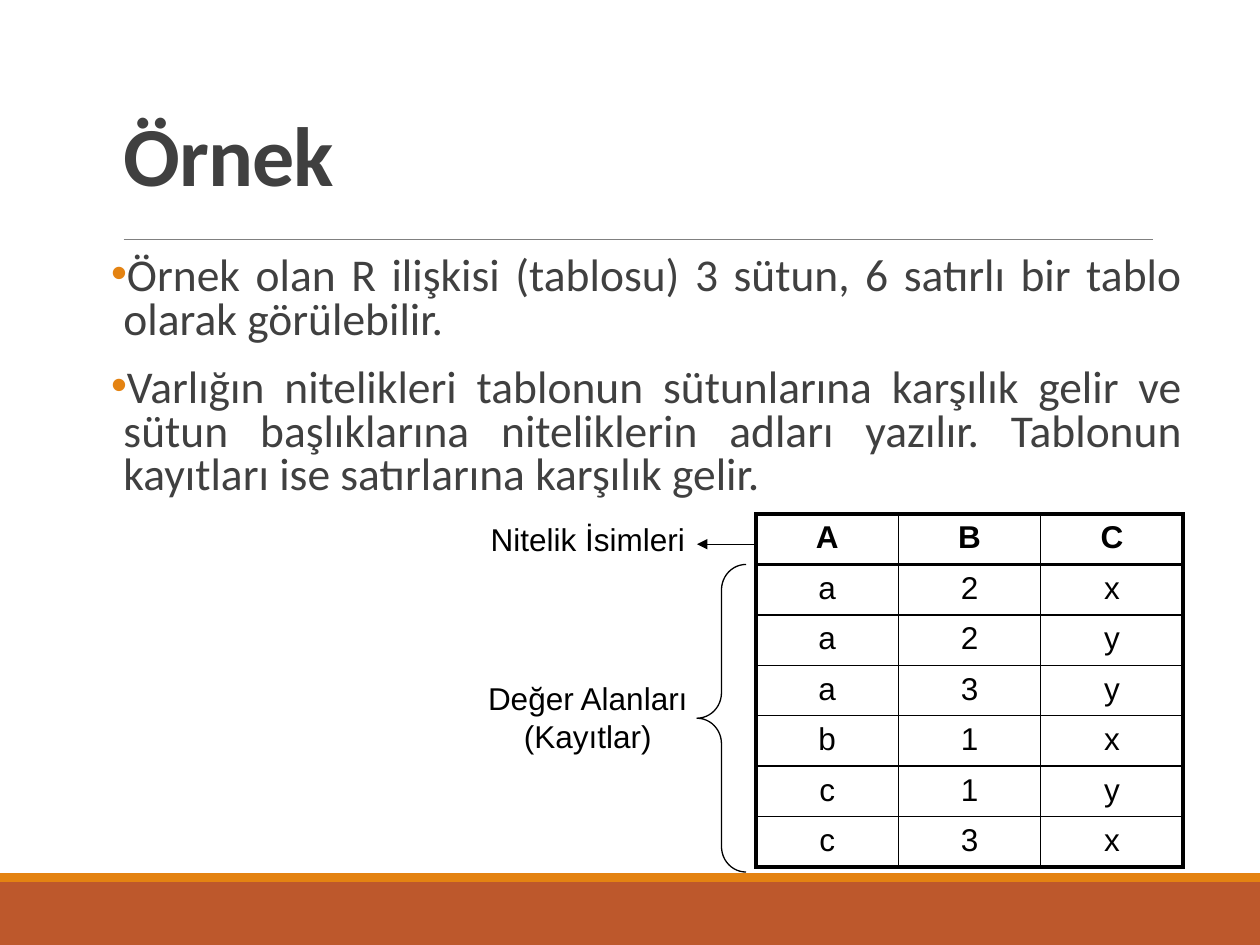
"""Build the slide that explains a relation as a table of attributes and records."""
from lxml.etree import SubElement
from pptx import Presentation
from pptx.dml.color import RGBColor
from pptx.enum.shapes import MSO_CONNECTOR as Connector, MSO_SHAPE as Shape
from pptx.enum.text import MSO_ANCHOR as Anchor, PP_ALIGN as Align
from pptx.oxml import parse_xml
from pptx.oxml.ns import nsdecls, qn
from pptx.util import Cm, Pt

BLACK = RGBColor(0x00, 0x00, 0x00)
GREY = RGBColor(0x80, 0x80, 0x80)
DARK = RGBColor(0x40, 0x40, 0x40)
ORANGE = RGBColor(0xE4, 0x83, 0x12)
RUST = RGBColor(0xBD, 0x58, 0x2C)


def add_run(para, text, font, size, color, bold=False):
    span = para.add_run()
    span.text = text
    span.font.name = font
    span.font.size = Pt(size)
    span.font.color.rgb = color
    span.font.bold = bold
    return span


def add_line(page, x1, y1, x2, y2, color, width):
    line = page.shapes.add_connector(Connector.STRAIGHT, Cm(x1), Cm(y1), Cm(x2), Cm(y2))
    line.line.color.rgb = color
    line.line.width = Pt(width)
    SubElement(line._element.spPr, qn("a:effectLst"))
    return line


deck = Presentation()
deck.slide_width, deck.slide_height = Cm(25.4), Cm(19.05)
page = deck.slides.add_slide(deck.slide_layouts[6])

for top, height, color in [(17.78, 1.27, RUST), (17.6, 0.18, ORANGE)]:
    band = page.shapes.add_shape(Shape.RECTANGLE, Cm(0), Cm(top), Cm(25.4), Cm(height))
    band.shadow.inherit = False
    band.fill.solid()
    band.fill.fore_color.rgb = color
    band.line.fill.background()

add_line(page, 2.49, 4.83, 23.24, 4.83, GREY, 0.5)

title = page.shapes.add_textbox(Cm(2.24), Cm(2.16), Cm(17.63), Cm(2.08)).text_frame
title.word_wrap = True
title.vertical_anchor = Anchor.BOTTOM
para = title.paragraphs[0]
para.line_spacing = 0.85
span = add_run(para, "Örnek", "Calibri", 48, DARK, True)
span.font._element.set("spc", "-50")

body = page.shapes.add_textbox(Cm(2.24), Cm(5.05), Cm(21.62), Cm(5.87)).text_frame
body.word_wrap = True
body.margin_left = body.margin_right = Cm(0)
POINTS = [
    "Örnek olan R ilişkisi (tablosu) 3 sütun, 6 satırlı bir tablo olarak görülebilir.",
    "Varlığın nitelikleri tablonun sütunlarına karşılık gelir ve sütun başlıklarına "
    "niteliklerin adları yazılır. Tablonun kayıtları ise satırlarına karşılık gelir.",
]
for index, text in enumerate(POINTS):
    para = body.add_paragraph() if index else body.paragraphs[0]
    para.alignment = Align.JUSTIFY
    para.line_spacing = 0.8
    para.space_before, para.space_after = Pt(12), Pt(2)
    props = para._p.get_or_add_pPr()
    props.set("marL", str(Cm(0.25)))
    props.set("indent", str(Cm(-0.25)))
    bullet_color = SubElement(props, qn("a:buClr"))
    SubElement(bullet_color, qn("a:srgbClr"), val=str(ORANGE))
    SubElement(props, qn("a:buFont"), typeface="Arial")
    SubElement(props, qn("a:buChar"), char="•")
    add_run(para, text, "Calibri", 26, DARK)

ROWS = ["ABC", "a2x", "a2y", "a3y", "b1x", "c1y", "c3x"]
last_row, last_col = len(ROWS) - 1, len(ROWS[0]) - 1
frame = page.shapes.add_table(len(ROWS), len(ROWS[0]), Cm(15.24), Cm(10.36), Cm(8.61), Cm(6.81))
table = frame.table
for column in table.columns:
    column.width = Cm(2.87)
for r, values in enumerate(ROWS):
    table.rows[r].height = Cm(0.97 if r else 0.99)
    for c, value in enumerate(values):
        cell = table.cell(r, c)
        para = cell.text_frame.paragraphs[0]
        para.alignment = Align.CENTER
        add_run(para, value, "Arial", 18, BLACK, r == 0)
        cell.fill.background()
        thick_sides = {"L": c == 0, "R": c == last_col, "T": r <= 1, "B": r in (0, last_row)}
        for place, (side, thick) in enumerate(thick_sides.items()):
            border = parse_xml(
                f'<a:ln{side} {nsdecls("a")} w="{Pt(2.25 if thick else 1)}">'
                f'<a:solidFill><a:srgbClr val="{BLACK}"/></a:solidFill></a:ln{side}>'
            )
            cell._tc.get_or_add_tcPr().insert(place, border)

brace = page.shapes.add_shape(Shape.LEFT_BRACE, Cm(14.05), Cm(11.38), Cm(0.99), Cm(6.2))
brace.shadow.inherit = False
brace.adjustments[0] = 0.52
brace.fill.background()
brace.line.color.rgb = BLACK
brace.line.width = Pt(0.75)

arrow = add_line(page, 15.24, 10.97, 14.05, 10.97, BLACK, 0.75)
SubElement(arrow.line._get_or_add_ln(), qn("a:tailEnd"), type="triangle")

LABELS = [("Nitelik İsimleri", 10.36, 1.02), ("Değer Alanları (Kayıtlar)", 13.56, 1.78)]
for text, top, height in LABELS:
    label = page.shapes.add_textbox(Cm(9.45), Cm(top), Cm(4.8), Cm(height)).text_frame
    label.word_wrap = True
    para = label.paragraphs[0]
    para.alignment = Align.CENTER
    add_run(para, text, "Arial", 18, BLACK)

deck.save("out.pptx")
